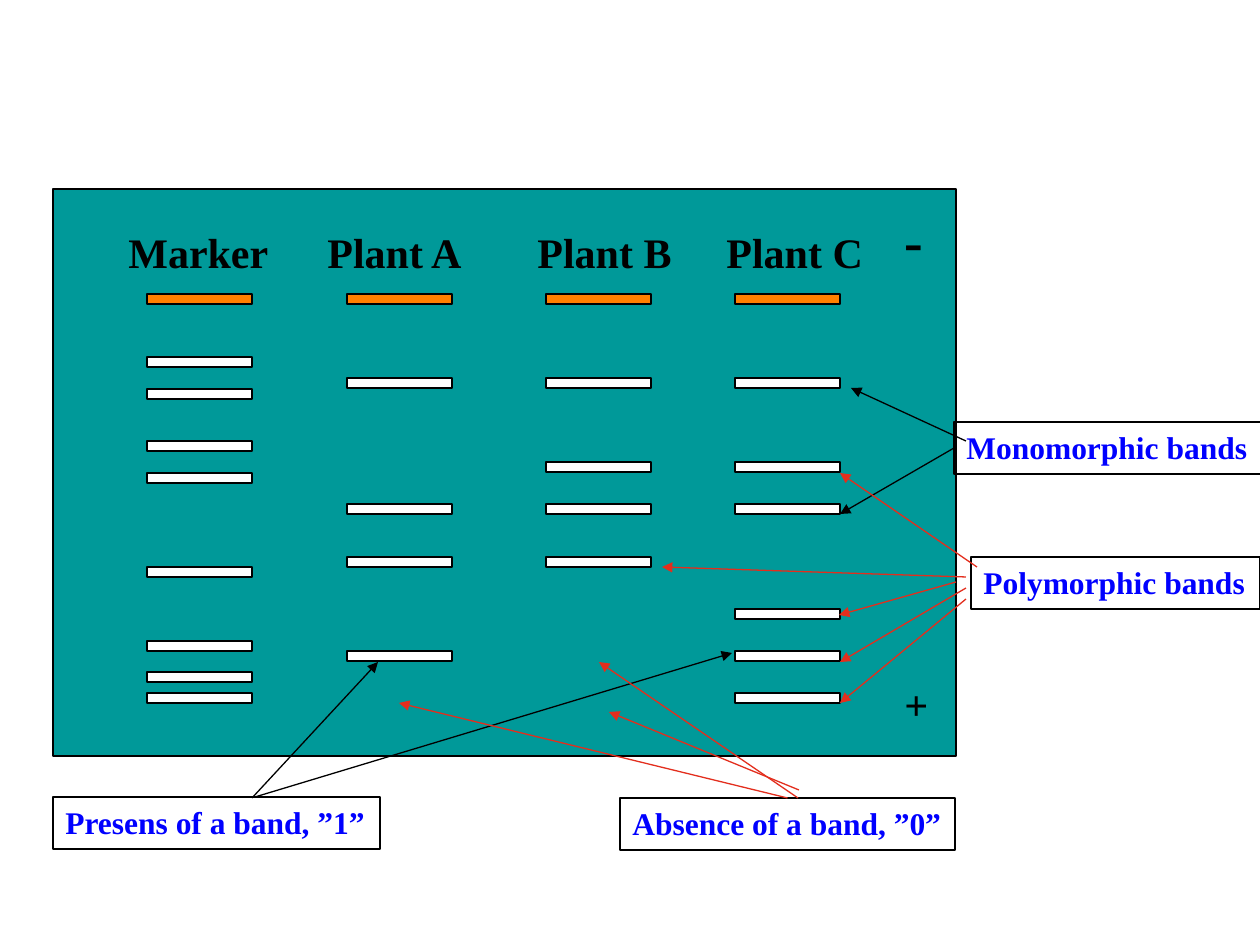
from dataclasses import dataclass

import pptx
import pptx.dml.color
import pptx.enum.shapes
import pptx.enum.text
import pptx.oxml.ns
import pptx.util
from lxml import etree

TOP, LEFT = 0, 1  # connection sites of a rectangle


@dataclass(frozen=True)
class Theme:
    font: str = "Times New Roman"
    ink: str = "000000"
    gel: str = "009999"
    well: str = "FF8000"
    band: str = "FFFFFF"
    callout: str = "0000FF"
    accent: str = "E32E1D"
    line: float = 0.75
    callout_size: int = 18
    lane_size: int = 24
    minus_size: int = 32


THEME = Theme()
GEL = (53, 189, 903, 567)
BAND_SIZE = (105, 10)
LANE_NAME_SIZE = (168, 63)
WELL_TOP = 105

# Lane name, band left, name left, band tops; all relative to the gel
LANES = [
    ("Marker", 94, 63, [168, 200, 252, 284, 378, 452, 483, 504]),
    ("Plant A", 294, 262, [189, 315, 368, 462]),
    ("Plant B", 493, 472, [189, 273, 315, 368]),
    ("Plant C", 682, 661, [189, 273, 315, 420, 462, 504]),
]

# Text, box, arrow colour, arrows. An arrow starts at an offset from the box
# or at a connection site, and ends at a point relative to the gel.
CALLOUTS = [
    ("Monomorphic bands", (954, 422, 307, 52), THEME.ink,
     [((12, 19), (798, 199)), (LEFT, (787, 325))]),
    ("Polymorphic bands", (971, 557, 289, 52), THEME.accent,
     [((6, 10), (787, 284)), ((-5, 20), (609, 378)), ((-15, 25), (786, 426)),
      ((-5, 31), (787, 473)), ((-5, 42), (787, 514))]),
    ("Presens of a band, ”1”", (53, 797, 327, 52), THEME.ink,
     [((202, 0), (679, 464)), ((199, 1), (325, 473))]),
    ("Absence of a band, ”0”", (620, 798, 335, 52), THEME.accent,
     [((178, 0), (546, 473)), (TOP, (346, 514)), ((179, -8), (556, 523))]),
]


def px(*lengths):
    """Turn px (126 to the inch) into EMU."""
    return [round(length * 914400 / 126) for length in lengths]


def rgb(colour):
    return pptx.dml.color.RGBColor.from_string(colour)


def outline(item, colour=THEME.ink):
    item.line.color.rgb = rgb(colour)
    item.line.width = pptx.util.Pt(THEME.line)


def add_block(slide, box, fill):
    block = slide.shapes.add_shape(
        pptx.enum.shapes.MSO_SHAPE.RECTANGLE, *px(*box))
    block.shadow.inherit = False
    block.fill.solid()
    block.fill.fore_color.rgb = rgb(fill)
    outline(block)


def add_label(slide, box, text, size, colour=THEME.ink):
    label = slide.shapes.add_textbox(*px(*box))
    frame = label.text_frame
    frame.word_wrap = False
    frame.auto_size = pptx.enum.text.MSO_AUTO_SIZE.SHAPE_TO_FIT_TEXT
    run = frame.paragraphs[0].add_run()
    run.text = text
    run.font.name = THEME.font
    run.font.size = pptx.util.Pt(size)
    run.font.bold = True
    run.font.color.rgb = rgb(colour)
    return label


def add_arrow(slide, start, end, colour):
    arrow = slide.shapes.add_connector(
        pptx.enum.shapes.MSO_CONNECTOR.STRAIGHT, *px(*start, *end))
    outline(arrow, colour)
    qn = pptx.oxml.ns.qn
    etree.SubElement(arrow.line._get_or_add_ln(), qn("a:tailEnd"), type="triangle")
    etree.SubElement(arrow._element.spPr, qn("a:effectLst"))
    return arrow


def add_gel(slide, box):
    left, top, _, _ = box
    add_block(slide, box, THEME.gel)
    for name, band_left, name_left, band_tops in LANES:
        add_label(slide, (left + name_left, top + 31, *LANE_NAME_SIZE),
                  name, THEME.lane_size)
        for band_top in [WELL_TOP, *band_tops]:
            fill = THEME.well if band_top == WELL_TOP else THEME.band
            add_block(slide, (left + band_left, top + band_top, *BAND_SIZE), fill)
    add_label(slide, (left + 839, top + 10, 44, 79), "-", THEME.minus_size)
    add_label(slide, (left + 839, top + 483, 49, 63), "+", THEME.lane_size)


def add_callout(slide, box, gel_box, text, colour, arrows):
    left, top, _, _ = box
    callout = add_label(slide, box, text, THEME.callout_size, THEME.callout)
    outline(callout)
    for start, (end_x, end_y) in arrows:
        glued = start in (TOP, LEFT)
        dx, dy = (0, 0) if glued else start
        arrow = add_arrow(slide, (left + dx, top + dy),
                          (gel_box[0] + end_x, gel_box[1] + end_y), colour)
        if glued:
            arrow.begin_connect(callout, start)


def main():
    deck = pptx.Presentation()
    deck.slide_width, deck.slide_height = px(1260, 945)
    slide = deck.slides.add_slide(deck.slide_layouts[6])
    add_gel(slide, GEL)
    for text, box, colour, arrows in CALLOUTS:
        add_callout(slide, box, GEL, text, colour, arrows)
    deck.save("out.pptx")


if __name__ == "__main__":
    main()
